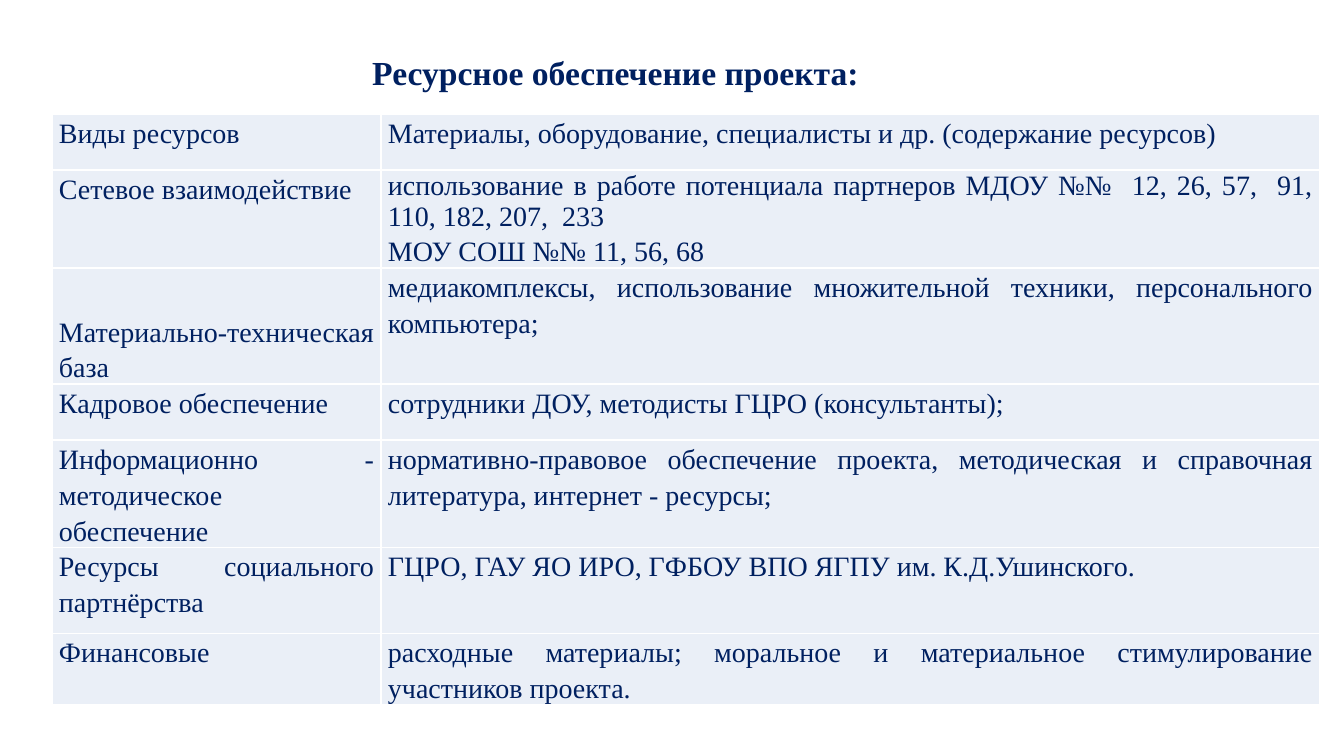
from lxml.etree import SubElement
from pptx import Presentation
from pptx.dml.color import RGBColor
from pptx.enum.text import MSO_ANCHOR as Anchor, MSO_AUTO_SIZE as AutoSize, PP_ALIGN as Align
from pptx.oxml.ns import qn
from pptx.util import Emu, Pt

NAVY = RGBColor(0x00, 0x20, 0x60)
PALE_BLUE = RGBColor(0xEA, 0xEF, 0xF7)
WHITE = RGBColor(0xFF, 0xFF, 0xFF)
FONT = "Times New Roman"
PX_PER_INCH = 100.8

COLUMN_WIDTHS = (329, 939)
RESOURCES = (
    (56, "Виды ресурсов", ["Материалы, оборудование, специалисты и др. (содержание ресурсов)"]),
    (83, "Сетевое взаимодействие", [
        "использование в работе потенциала партнеров МДОУ №№  12, 26, 57,  91, 110, 182, 207,  233",
        "МОУ СОШ №№ 11, 56, 68"]),
    (116, "Материально-техническая база", [
        "медиакомплексы, использование множительной техники, персонального компьютера;"]),
    (56, "Кадровое обеспечение", ["сотрудники ДОУ, методисты ГЦРО (консультанты);"]),
    (100, "Информационно - методическое обеспечение", [
        "нормативно-правовое обеспечение проекта, методическая и справочная литература, "
        "интернет - ресурсы;"]),
    (86, "Ресурсы социального партнёрства", [
        "ГЦРО, ГАУ ЯО ИРО, ГФБОУ ВПО ЯГПУ им. К.Д.Ушинского."]),
    (67, "Финансовые", [
        "расходные материалы; моральное и материальное стимулирование участников проекта."]),
)
NETWORK_ROW, EQUIPMENT_ROW = 1, 2


def px(length):
    """Turn pixels into EMU."""
    return Emu(round(length * 914400 / PX_PER_INCH))


def write(paragraph, text, size=20, bold=False, align=Align.JUSTIFY, spacing=1.15):
    """Fill a paragraph with formatted text."""
    paragraph.alignment = align
    paragraph.line_spacing = spacing
    run = paragraph.add_run()
    run.text = text
    run.font.name = FONT
    run.font.size = Pt(size)
    run.font.bold = bold
    run.font.color.rgb = NAVY


def add_borders(cell):
    """Draw thin white lines around a cell."""
    properties = cell._tc.get_or_add_tcPr()
    for position, side in enumerate(("lnL", "lnR", "lnT", "lnB")):
        line = properties.makeelement(qn(f"a:{side}"), {"w": str(Pt(1))})
        fill = SubElement(line, qn("a:solidFill"))
        SubElement(fill, qn("a:srgbClr"), val=str(WHITE))
        properties.insert(position, line)


def fill_cell(cell, texts, spacings=(1.15,), anchor=Anchor.TOP):
    """Style a cell and write one paragraph for each text."""
    cell.fill.solid()
    cell.fill.fore_color.rgb = PALE_BLUE
    add_borders(cell)
    cell.margin_left = cell.margin_right = px(7)
    cell.margin_top = cell.margin_bottom = 0
    cell.vertical_anchor = anchor
    frame = cell.text_frame
    for index, (text, spacing) in enumerate(zip(texts, spacings)):
        paragraph = frame.add_paragraph() if index else frame.paragraphs[0]
        write(paragraph, text, spacing=spacing)


def add_resources(slide):
    """Add the table of resource kinds and their contents."""
    height = sum(row[0] for row in RESOURCES)
    table = slide.shapes.add_table(len(RESOURCES), len(COLUMN_WIDTHS), px(52), px(114),
                                   px(sum(COLUMN_WIDTHS)), px(height)).table
    table.first_row = table.horz_banding = False
    for column, width in zip(table.columns, COLUMN_WIDTHS):
        column.width = px(width)
    for index, (row_height, kind, contents) in enumerate(RESOURCES):
        table.rows[index].height = px(row_height)
        anchor = Anchor.BOTTOM if index == EQUIPMENT_ROW else Anchor.TOP
        spacings = (1.0, 1.15) if index == NETWORK_ROW else (1.15,)
        fill_cell(table.cell(index, 0), [kind], anchor=anchor)
        fill_cell(table.cell(index, 1), contents, spacings=spacings)


def add_title(slide):
    """Add the centred heading."""
    frame = slide.shapes.add_textbox(px(52), px(47), px(1127), px(50)).text_frame
    frame.word_wrap = True
    frame.auto_size = AutoSize.SHAPE_TO_FIT_TEXT
    write(frame.paragraphs[0], "Ресурсное обеспечение проекта:", size=24, bold=True,
          align=Align.CENTER, spacing=1.0)


def main():
    """Build and save the slide."""
    deck = Presentation()
    deck.slide_width, deck.slide_height = px(1344), px(756)
    slide = deck.slides.add_slide(deck.slide_layouts[6])
    add_resources(slide)
    add_title(slide)
    deck.save("out.pptx")


if __name__ == "__main__":
    main()
